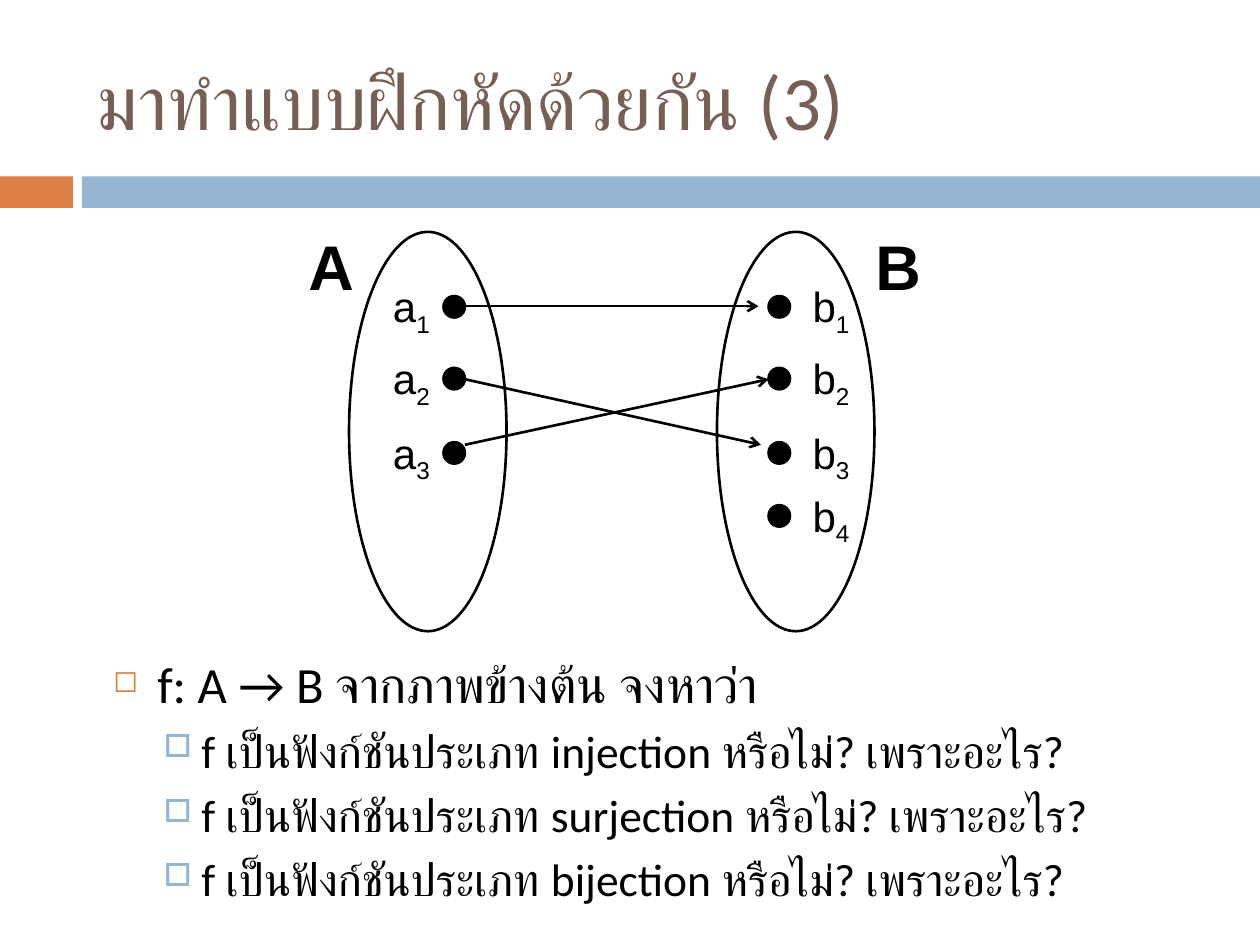
"""Build the exercise slide that maps set A to set B."""
from dataclasses import dataclass

from lxml.etree import SubElement
from pptx import Presentation
from pptx.dml.color import RGBColor
from pptx.enum.shapes import MSO_CONNECTOR, MSO_SHAPE
from pptx.enum.text import MSO_ANCHOR, MSO_AUTO_SIZE
from pptx.oxml.ns import qn
from pptx.slide import Slide
from pptx.text.text import TextFrame, _Paragraph
from pptx.util import Inches, Pt


@dataclass(frozen=True)
class Theme:
    ink: str = "000000"
    heading: str = "775F55"
    orange: str = "DD8047"
    blue: str = "94B6D2"
    text_font: str = "Calibri"
    diagram_font: str = "Arial"
    title_size: float = 44
    set_size: float = 36
    question_size: float = 29
    item_size: float = 26
    element_size: float = 24
    line_width: float = 1.5


@dataclass(frozen=True)
class Box:
    left: float
    top: float
    width: float
    height: float

    def lengths(self) -> tuple:
        return tuple(Inches(v) for v in (self.left, self.top, self.width, self.height))


@dataclass(frozen=True)
class MappedSet:
    name: str
    element: str
    count: int
    oval_left: float
    name_left: float
    dot_left: float
    label_left: float


@dataclass(frozen=True)
class Arrow:
    start: tuple[float, float]
    end: tuple[float, float]


@dataclass(frozen=True)
class Bullet:
    mark: str
    color: str
    percent: int
    level: int
    margin: float
    hanging: float
    before: float
    size: float


THEME = Theme()
DOT_TOPS = (2.35, 2.92, 3.51, 4.01)
DOT_SIZE = 0.17
LABEL_RISE = 0.17
SETS = (
    MappedSet("A", "a", 3, 2.77, 2.35, 3.52, 3.02),
    MappedSet("B", "b", 4, 5.69, 6.85, 6.1, 6.35),
)
ARROWS = (
    Arrow((3.69, 2.43), (6.02, 2.43)),
    Arrow((3.69, 3.01), (6.04, 3.53)),
    Arrow((3.69, 3.53), (6.1, 3.01)),
)
QUESTION = Bullet("◻", THEME.orange, 60, 0, 0.35, 0.35, 7, THEME.question_size)
ITEM = Bullet("□", THEME.blue, 70, 1, 0.7, 0.3, 5.5, THEME.item_size)
PROPERTIES = ("injection", "surjection", "bijection")


def add_run(paragraph: _Paragraph, text: str, size: float, font: str,
            color: str = THEME.ink, bold: bool = False, baseline: int = 0) -> None:
    run = paragraph.add_run()
    run.text = text
    for attribute, value in {"size": Pt(size), "name": font, "bold": bold}.items():
        setattr(run.font, attribute, value)
    run.font.color.rgb = RGBColor.from_string(color)
    if baseline:
        run.font._element.set("baseline", str(baseline * 1000))


def add_text(slide: Slide, box: Box, grow: bool = False,
             anchor: MSO_ANCHOR = MSO_ANCHOR.TOP) -> TextFrame:
    frame = slide.shapes.add_textbox(*box.lengths()).text_frame
    fit = MSO_AUTO_SIZE.SHAPE_TO_FIT_TEXT if grow else MSO_AUTO_SIZE.NONE
    settings = {"word_wrap": True, "auto_size": fit, "vertical_anchor": anchor}
    for attribute, value in settings.items():
        setattr(frame, attribute, value)
    return frame


def add_figure(slide: Slide, kind: MSO_SHAPE, box: Box,
               fill: str | None = None, line: str | None = None) -> None:
    figure = slide.shapes.add_shape(kind, *box.lengths())
    figure.shadow.inherit = False
    if fill:
        figure.fill.solid()
        figure.fill.fore_color.rgb = RGBColor.from_string(fill)
    else:
        figure.fill.background()
    if line:
        figure.line.color.rgb = RGBColor.from_string(line)
        figure.line.width = Pt(THEME.line_width)
    else:
        figure.line.fill.background()


def add_arrow(slide: Slide, arrow: Arrow) -> None:
    ends = (Inches(v) for v in (*arrow.start, *arrow.end))
    connector = slide.shapes.add_connector(MSO_CONNECTOR.STRAIGHT, *ends)
    connector.line.color.rgb = RGBColor.from_string(THEME.ink)
    connector.line.width = Pt(THEME.line_width)
    SubElement(connector.line._get_or_add_ln(), qn("a:tailEnd"), type="arrow")
    SubElement(connector._element.spPr, qn("a:effectLst"))


def add_elements(slide: Slide, group: MappedSet) -> None:
    for number, top in enumerate(DOT_TOPS[:group.count], start=1):
        dot = Box(group.dot_left, top, DOT_SIZE, DOT_SIZE)
        add_figure(slide, MSO_SHAPE.OVAL, dot, THEME.ink, THEME.ink)
        label = Box(group.label_left, top - LABEL_RISE, 0.58, 0.51)
        paragraph = add_text(slide, label, grow=True).paragraphs[0]
        for text, baseline in ((group.element, 0), (str(number), -25)):
            add_run(paragraph, text, THEME.element_size, THEME.diagram_font,
                    baseline=baseline)


def add_outline(slide: Slide, group: MappedSet) -> None:
    oval = Box(group.oval_left, 1.84, 1.25, 3.17)
    add_figure(slide, MSO_SHAPE.OVAL, oval, line=THEME.ink)
    name = add_text(slide, Box(group.name_left, 1.76, 0.67, 0.71), grow=True)
    add_run(name.paragraphs[0], group.name, THEME.set_size, THEME.diagram_font, bold=True)


def write_bullet(paragraph: _Paragraph, text: str, bullet: Bullet) -> None:
    paragraph.level = bullet.level
    paragraph.space_before = Pt(bullet.before)
    properties = paragraph._p.get_or_add_pPr()
    for key, length in {"marL": bullet.margin, "indent": -bullet.hanging}.items():
        properties.set(key, str(Inches(length)))
    color = SubElement(properties, qn("a:buClr"))
    SubElement(color, qn("a:srgbClr"), val=bullet.color)
    SubElement(properties, qn("a:buSzPct"), val=str(bullet.percent * 1000))
    SubElement(properties, qn("a:buChar"), char=bullet.mark)
    add_run(paragraph, text, bullet.size, THEME.text_font)


def main() -> None:
    deck = Presentation()
    deck.slide_width, deck.slide_height = Inches(10), Inches(7.5)
    slide = deck.slides.add_slide(deck.slide_layouts[6])

    add_figure(slide, MSO_SHAPE.RECTANGLE, Box(0, 1.4, 0.58, 0.25), THEME.orange)
    add_figure(slide, MSO_SHAPE.RECTANGLE, Box(0.65, 1.4, 9.35, 0.25), THEME.blue)
    title = add_text(slide, Box(0.67, 0.25, 8.92, 1.08), anchor=MSO_ANCHOR.MIDDLE)
    add_run(title.paragraphs[0], "มาทำแบบฝึกหัดด้วยกัน (3)", THEME.title_size,
            THEME.text_font, THEME.heading)

    body = add_text(slide, Box(0.8, 5.13, 9, 1.45))
    write_bullet(body.paragraphs[0], "f: A → B จากภาพข้างต้น จงหาว่า", QUESTION)
    for name in PROPERTIES:
        write_bullet(body.add_paragraph(),
                     f"f เป็นฟังก์ชันประเภท {name} หรือไม่? เพราะอะไร?", ITEM)

    for group in SETS:
        add_elements(slide, group)
    for arrow in ARROWS:
        add_arrow(slide, arrow)
    for group in SETS:
        add_outline(slide, group)
    deck.save("out.pptx")


if __name__ == "__main__":
    main()
